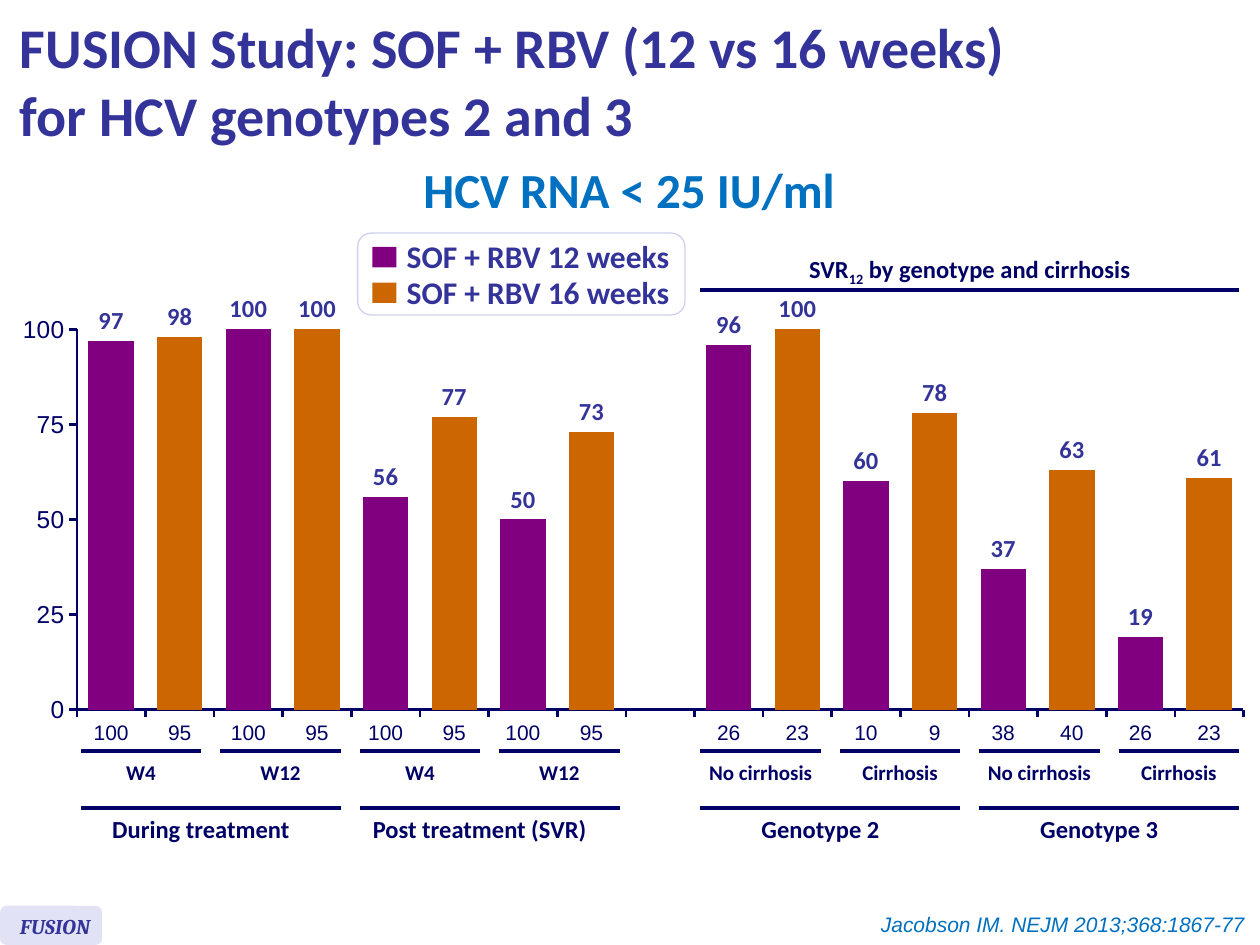
from lxml import etree
from pptx import Presentation
from pptx.chart.data import CategoryChartData
from pptx.dml.color import RGBColor
from pptx.enum.chart import XL_CHART_TYPE, XL_LABEL_POSITION, XL_TICK_MARK
from pptx.enum.shapes import MSO_CONNECTOR, MSO_SHAPE
from pptx.enum.text import MSO_ANCHOR, PP_ALIGN
from pptx.oxml import parse_xml
from pptx.oxml.ns import nsdecls, qn
from pptx.util import Cm, Pt

NAVY = RGBColor(0x00, 0x00, 0x66)
INDIGO = RGBColor(0x33, 0x33, 0x99)
BLUE = RGBColor(0x00, 0x70, 0xC0)
PURPLE = RGBColor(0x80, 0x00, 0x80)
ORANGE = RGBColor(0xCC, 0x66, 0x00)
LAVENDER = RGBColor(0xE2, 0xE2, 0xF6)
PALE = RGBColor(0xD0, 0xD0, 0xF0)
WHITE = RGBColor(0xFF, 0xFF, 0xFF)

# Patients per bar and response rate; None leaves the gap between the panels
OVERALL = [(100, 97), (95, 98), (100, 100), (95, 100),
           (100, 56), (95, 77), (100, 50), (95, 73)]
BY_GENOTYPE = [(26, 96), (23, 100), (10, 60), (9, 78),
               (38, 37), (40, 63), (26, 19), (23, 61)]
BARS = OVERALL + [("", None)] + BY_GENOTYPE

# Rules under the bars
PITCH, RULE_W = 2.81, 2.43
PANEL_W = 3 * PITCH + RULE_W


def style_font(font, size, color, name="Calibri", bold=True, italic=False):
    font.size, font.name, font.bold, font.italic = Pt(size), name, bold, italic
    font.color.rgb = color


def add_text(s, box, text, size, color, align=PP_ALIGN.LEFT, wrap=False, **style):
    tf = s.shapes.add_textbox(*map(Cm, box)).text_frame
    tf.word_wrap = wrap
    p = tf.paragraphs[0]
    p.text, p.alignment = text, align
    style_font(p.font, size, color, **style)
    return tf


def add_centred(s, center, y, w, h, text, size, color=NAVY):
    return add_text(s, (center - w / 2, y, w, h), text, size, color, PP_ALIGN.CENTER)


def add_rule(s, x, y, w):
    line = s.shapes.add_connector(MSO_CONNECTOR.STRAIGHT, Cm(x), Cm(y), Cm(x + w), Cm(y))
    line.line.color.rgb = NAVY
    line.line.width = Pt(2.25)
    etree.SubElement(line._element.spPr, qn("a:effectLst"))


def add_box(s, kind, box, fill, outline=None):
    sp = s.shapes.add_shape(kind, *map(Cm, box))
    sp.shadow.inherit = False
    sp.fill.solid()
    sp.fill.fore_color.rgb = fill
    if outline is None:
        sp.line.fill.background()
    else:
        sp.line.color.rgb = outline
        sp.line.width = Pt(0.75)


def add_heading(s, x, y, w):
    tf = add_text(s, (x, y, w, 3.07),
                  "FUSION Study: SOF + RBV (12 vs 16 weeks)\vfor HCV genotypes 2 and 3",
                  32, INDIGO, wrap=True)
    tf.vertical_anchor = MSO_ANCHOR.MIDDLE
    add_centred(s, x + 12.53, y + 3.02, 8.89, 1.45, "HCV RNA < 25 IU/ml", 28, BLUE)


def add_bar_chart(s, x, y, w, h):
    data = CategoryChartData()
    data.categories = [str(n) for n, _ in BARS]
    data.add_series("Response (%)", [rate for _, rate in BARS])
    chart = s.shapes.add_chart(XL_CHART_TYPE.COLUMN_CLUSTERED,
                               *map(Cm, (x, y, w, h)), data).chart
    chart.has_title = chart.has_legend = False
    style_font(chart.font, 18, NAVY, "Arial", bold=False)

    # Axes
    for axis, size in ((chart.category_axis, 12), (chart.value_axis, 14)):
        axis.has_major_gridlines = False
        axis.major_tick_mark = XL_TICK_MARK.OUTSIDE
        axis.minor_tick_mark = XL_TICK_MARK.NONE
        axis.format.line.color.rgb = NAVY
        axis.format.line.width = Pt(1.5)
        style_font(axis.tick_labels.font, size, NAVY, "Arial", bold=False)
    scale = chart.value_axis
    scale.minimum_scale, scale.maximum_scale, scale.major_unit = 0, 100, 25

    # Bars, alternating by arm within each panel
    plot = chart.plots[0]
    plot.gap_width = 51
    plot.vary_by_categories = False
    series = plot.series[0]
    series.format.fill.solid()
    series.format.fill.fore_color.rgb = PURPLE
    for panel_start in (0, len(OVERALL) + 1):
        for i in range(panel_start + 1, panel_start + 8, 2):
            fill = series.points[i].format.fill
            fill.solid()
            fill.fore_color.rgb = ORANGE
    labels = series.data_labels
    labels.show_value = True
    labels.position = XL_LABEL_POSITION.OUTSIDE_END
    style_font(labels.font, 14, INDIGO)

    # Fixed inner plot area
    area = chart._chartSpace.chart.plotArea
    for old in area.findall(qn("c:layout")):
        area.remove(old)
    frame = "".join(f'<c:{tag} val="{val}"/>' for tag, val in (
        ("layoutTarget", "inner"), ("xMode", "edge"), ("yMode", "edge"),
        ("x", 0.059), ("y", 0.108), ("w", 0.926), ("h", 0.786)))
    area.insert(0, parse_xml(f'<c:layout {nsdecls("c")}><c:manualLayout>{frame}'
                             '</c:manualLayout></c:layout>'))


def add_panel_labels(s, x, y, pairs, groups):
    """Two levels of rules and captions; each caption comes with its box width."""
    for i in range(4):
        left = x + i * PITCH
        text, w = pairs[i % 2]
        add_rule(s, left, y, RULE_W)
        add_centred(s, left + RULE_W / 2, y + 0.05, w, 0.76, text, 12)
    group_w = PITCH + RULE_W
    for i, (text, w) in enumerate(groups):
        left = x + i * 2 * PITCH
        add_rule(s, left, y + 1.14, group_w)
        add_centred(s, left + group_w / 2 - 0.2, y + 1.14, w, 0.86, text, 14)


def add_legend(s, x, y, w, h):
    add_box(s, MSO_SHAPE.ROUNDED_RECTANGLE, (x, y, w, h), WHITE, PALE)
    for i, (weeks, color) in enumerate(((12, PURPLE), (16, ORANGE))):
        top = y + i * 0.72
        add_box(s, MSO_SHAPE.RECTANGLE, (x + 0.3, top + 0.28, 0.48, 0.41), color)
        add_text(s, (x + 0.74, top - 0.05, 5.87, 1.02),
                 f"SOF + RBV {weeks} weeks", 18, INDIGO)


def add_genotype_header(s, x, y, w):
    tf = add_centred(s, x + w / 2, y - 0.84, 7.24, 0.86, "", 14)
    p = tf.paragraphs[0]
    for text, baseline in (("SVR", 0), ("12", -25000), (" by genotype and cirrhosis", 0)):
        r = p.add_run()
        r.text = text
        if baseline:
            r._r.get_or_add_rPr().set("baseline", str(baseline))
    add_rule(s, x, y, w)


def add_footer(s, x, y, w):
    add_box(s, MSO_SHAPE.ROUNDED_RECTANGLE, (x, y, 2.06, 0.79), LAVENDER)
    add_text(s, (x + 0.15, y + 0.03, 2.24, 0.76), "FUSION", 12, INDIGO,
             wrap=True, name="Cambria", italic=True)
    add_text(s, (x + w - 9.73, y, 9.68, 0.76), "Jacobson IM. NEJM 2013;368:1867-77",
             12, BLUE, PP_ALIGN.RIGHT, wrap=True, name="Arial", bold=False, italic=True)


def main():
    prs = Presentation()
    prs.slide_width, prs.slide_height = Cm(25.4), Cm(19.05)
    s = prs.slides.add_slide(prs.slide_layouts[6])
    add_heading(s, 0.15, 0.08, 24.26)
    add_bar_chart(s, 0.05, 5.59, 25.4, 9.75)
    add_panel_labels(s, 1.63, 15.14, [("W4", 1.12), ("W12", 1.35)],
                     [("During treatment", 4.14), ("Post treatment (SVR)", 4.85)])
    add_panel_labels(s, 14.12, 15.14, [("No cirrhosis", 2.62), ("Cirrhosis", 2.06)],
                     [("Genotype 2", 2.9), ("Genotype 3", 2.9)])
    add_legend(s, 7.21, 4.7, 6.6, 1.65)
    add_genotype_header(s, 14.12, 5.84, PANEL_W)
    add_footer(s, 0, 18.26, 25.4)
    prs.save("out.pptx")


if __name__ == "__main__":
    main()
